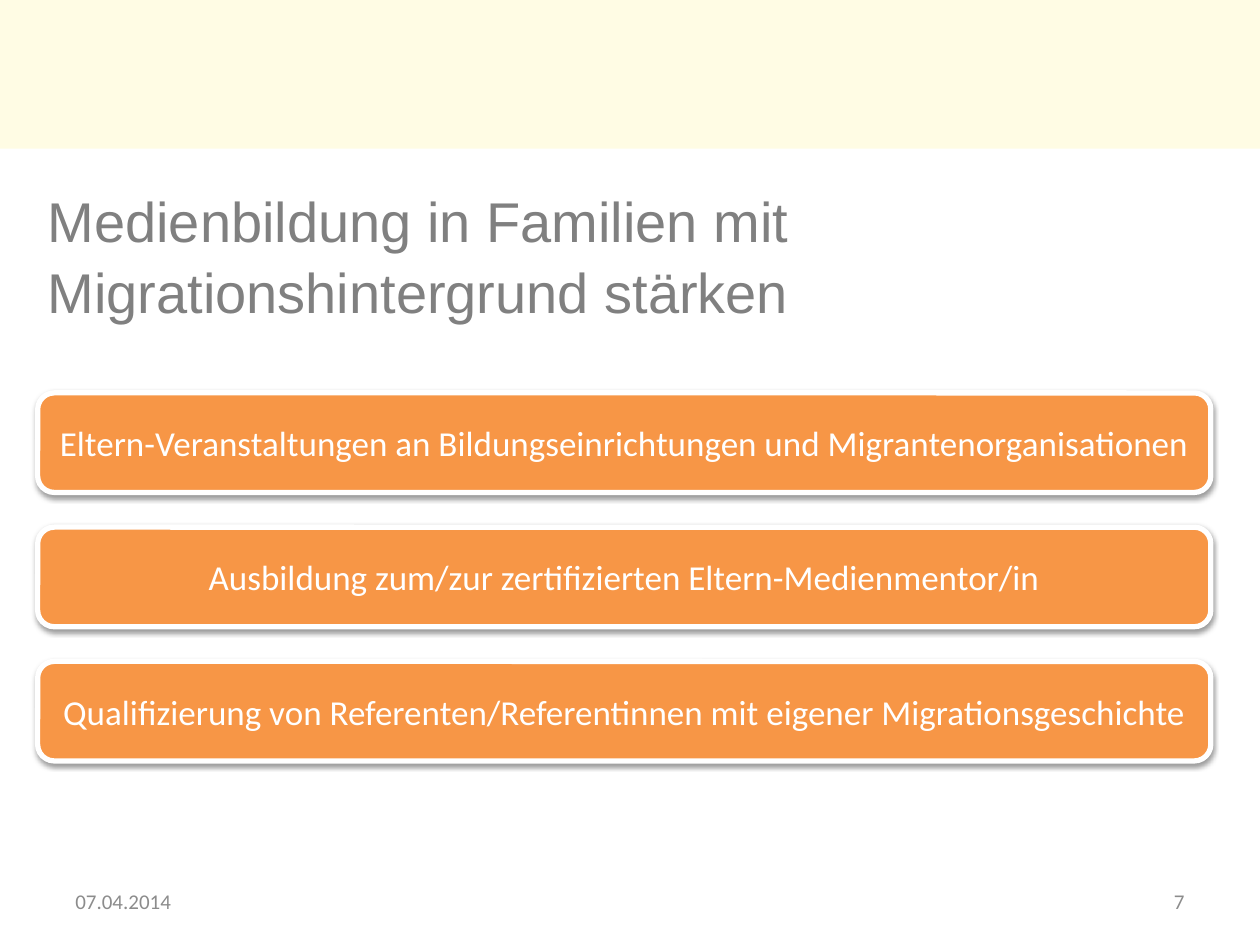
from lxml.etree import SubElement
from pptx import Presentation
from pptx.dml.color import RGBColor
from pptx.enum.shapes import MSO_SHAPE
from pptx.enum.text import MSO_ANCHOR, PP_ALIGN
from pptx.oxml.ns import qn
from pptx.util import Cm, Pt

CREAM = RGBColor(0xFF, 0xFC, 0xE4)
ORANGE = RGBColor(0xF7, 0x96, 0x46)
WHITE = RGBColor(0xFF, 0xFF, 0xFF)
GREY = RGBColor(0x80, 0x80, 0x80)
FOOTER_GREY = RGBColor(0x8C, 0x8C, 0x8C)

MEASURES = [
    "Eltern-Veranstaltungen an Bildungseinrichtungen und Migrantenorganisationen",
    "Ausbildung zum/zur zertifizierten Eltern-Medienmentor/in",
    "Qualifizierung von Referenten/Referentinnen mit eigener Migrationsgeschichte",
]


def set_text(shape, text, size, color, font="Calibri", align=PP_ALIGN.LEFT, spacing=1.0):
    """Write one vertically centred paragraph into a shape."""
    tf = shape.text_frame
    tf.word_wrap = True
    tf.vertical_anchor = MSO_ANCHOR.MIDDLE
    p = tf.paragraphs[0]
    p.alignment = align
    p.line_spacing = spacing
    r = p.add_run()
    r.text = text
    r.font.name = font
    r.font.size = Pt(size)
    r.font.color.rgb = color


def add_text(s, box, text, **fmt):
    """Add a text box at box, given in centimetres."""
    set_text(s.shapes.add_textbox(*map(Cm, box)), text, **fmt)


def add_filled(s, kind, box, color):
    """Add a plain filled shape without outline or shadow."""
    sp = s.shapes.add_shape(kind, *map(Cm, box))
    sp.shadow.inherit = False
    sp.fill.solid()
    sp.fill.fore_color.rgb = color
    sp.line.fill.background()
    return sp


def add_drop_shadow(sp):
    """Give a shape a soft black shadow straight below it."""
    effects = sp._element.spPr.find(qn("a:effectLst"))
    shadow = SubElement(effects, qn("a:outerShdw"), blurRad=str(Pt(3.1)),
                        dist=str(Pt(1.6)), dir="5400000", rotWithShape="0")
    black = SubElement(shadow, qn("a:srgbClr"), val="000000")
    SubElement(black, qn("a:alpha"), val="38000")


def add_measures(s, box, measures, gap):
    """Stack one rounded bar per measure with equal gaps inside box."""
    left, top, width, height = box
    bar_height = (height - gap * (len(measures) - 1)) / len(measures)
    for i, text in enumerate(measures):
        bar_box = (left, top + i * (bar_height + gap), width, bar_height)
        sp = add_filled(s, MSO_SHAPE.ROUNDED_RECTANGLE, bar_box, ORANGE)
        sp.line.color.rgb = WHITE
        sp.line.width = Pt(3)
        add_drop_shadow(sp)
        set_text(sp, text, size=20, color=WHITE, align=PP_ALIGN.CENTER)


def add_footer(s, box, date, number):
    """Place the date at the left and the page number at the right of box."""
    left, top, width, height = box
    date_width, number_width = 3.43, 1.63
    add_text(s, (left, top, date_width, height), date, size=12, color=FOOTER_GREY)
    add_text(s, (left + width - number_width, top, number_width, height), number,
             size=12, color=FOOTER_GREY, align=PP_ALIGN.RIGHT)


def main():
    """Build and save the slide."""
    prs = Presentation()
    prs.slide_width, prs.slide_height = Cm(25.4), Cm(19.05)
    s = prs.slides.add_slide(prs.slide_layouts[6])
    add_filled(s, MSO_SHAPE.RECTANGLE, (0, 0, 25.4, 3), CREAM)
    add_text(s, (0.71, 3.53, 22.86, 3.18),
             "Medienbildung in Familien mit Migrationshintergrund stärken",
             size=32, color=GREY, font="Arial", spacing=1.05)
    add_measures(s, (0.76, 7.92, 23.65, 7.42), MEASURES, gap=0.7)
    add_footer(s, (1.27, 17.65, 22.86, 1.02), "07.04.2014", "7")
    prs.save("out.pptx")


if __name__ == "__main__":
    main()
